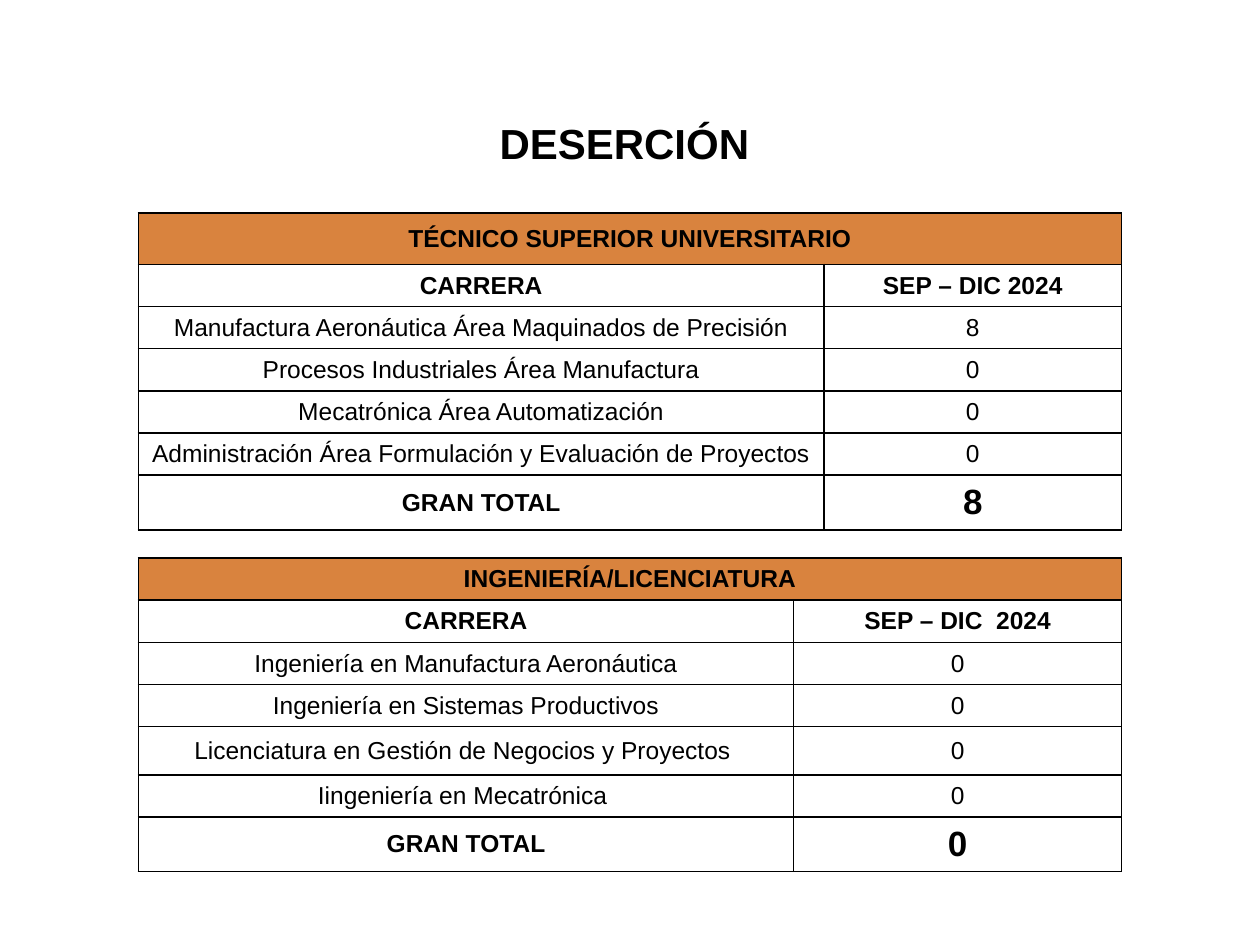
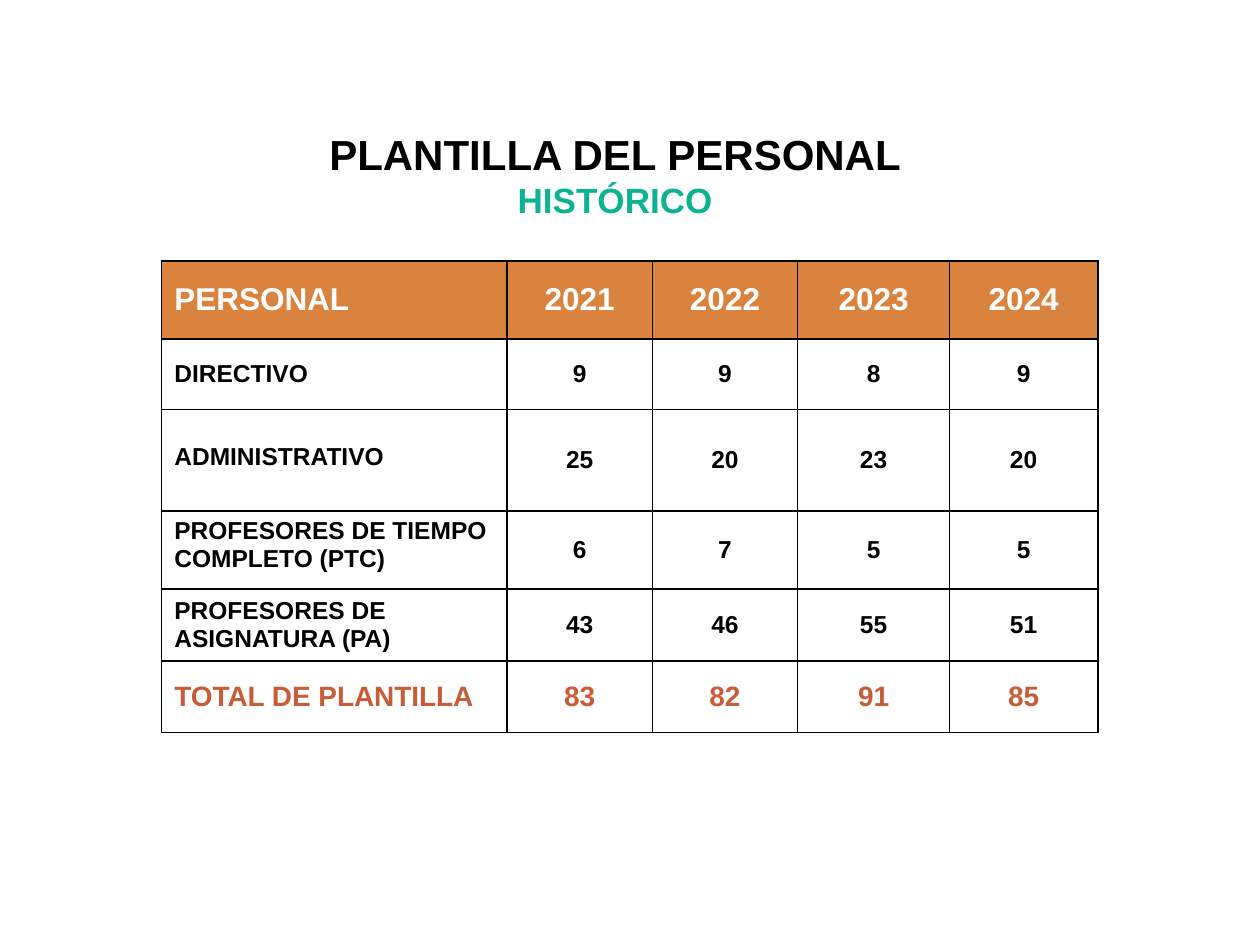
from dataclasses import dataclass
from typing import Any

from lxml import etree
from pptx import Presentation
from pptx import util as u
from pptx.dml.color import RGBColor
from pptx.enum import text
from pptx.oxml import ns

FONT = "Arial"
BLACK, WHITE, ORANGE, TEAL, RUST = "000000", "FFFFFF", "D9833E", "0CB393", "C65D38"
TITLE_ONLY = 5
BODY_HEIGHT = 0.85


@dataclass(frozen=True)
class Style:
    size: float = 14
    bold: bool = True
    color: str = BLACK
    fill: str = WHITE


@dataclass(frozen=True)
class Line:
    words: str
    style: Style


@dataclass(frozen=True)
class Row:
    words: tuple[str, ...]
    height: float
    first: Style
    others: Style
    label_top: float | None = None


@dataclass(frozen=True)
class Grid:
    left: float
    top: float
    columns: tuple[float, ...]
    rows: list[Row]
    first_align: Any = text.PP_ALIGN.CENTER


HEADING = Style(size=24)
SUBHEADING = Style(size=20, color=TEAL)
BAND = Style(fill=ORANGE)
STRONG = Style()
PLAIN = Style(bold=False)
GRAND_TOTAL = Style(size=20)
YEARS = Style(size=18, color=WHITE, fill=ORANGE)
STAFF_TOTAL = Style(size=16, color=RUST)


def rgb(value: str) -> RGBColor:
    return RGBColor.from_string(value)


def apply(target: Any, values: dict[str, Any]) -> None:
    for name, value in values.items():
        setattr(target, name, value)


def write(para: Any, words: str, style: Style, align: Any) -> None:
    para.alignment = align
    span = para.add_run()
    span.text = words
    apply(span.font, {"name": FONT, "size": u.Pt(style.size), "bold": style.bold})
    span.font.color.rgb = rgb(style.color)


def add_borders(cell: Any) -> None:
    properties = cell._tc.get_or_add_tcPr()
    for side in ("a:lnL", "a:lnR", "a:lnT", "a:lnB"):
        line = etree.SubElement(properties, ns.qn(side), w=str(u.Pt(1)))
        paint = etree.SubElement(line, ns.qn("a:solidFill"))
        etree.SubElement(paint, ns.qn("a:srgbClr"), val=BLACK)


def add_page(deck: Any, left: float, top: float, width: float, height: float,
             lines: list[Line]) -> Any:
    page = deck.slides.add_slide(deck.slide_layouts[TITLE_ONLY])
    title = page.shapes.title
    apply(title, {"left": u.Cm(left), "top": u.Cm(top),
                  "width": u.Cm(width), "height": u.Cm(height)})
    box = title.text_frame
    apply(box, {"word_wrap": True, "auto_size": text.MSO_AUTO_SIZE.NONE,
                "vertical_anchor": text.MSO_ANCHOR.TOP})
    for index, line in enumerate(lines):
        para = box.add_paragraph() if index else box.paragraphs[0]
        write(para, line.words, line.style, text.PP_ALIGN.CENTER)
    return page


def add_grid(page: Any, grid: Grid) -> None:
    height = sum(row.height for row in grid.rows)
    table = page.shapes.add_table(
        len(grid.rows), len(grid.columns), u.Cm(grid.left), u.Cm(grid.top),
        u.Cm(sum(grid.columns)), u.Cm(height)).table
    apply(table, {"first_row": False, "horz_banding": False})
    for column, width in zip(table.columns, grid.columns):
        column.width = u.Cm(width)
    for row_index, row in enumerate(grid.rows):
        table.rows[row_index].height = u.Cm(row.height)
        for column_index in range(len(grid.columns)):
            cell = table.cell(row_index, column_index)
            style = row.others if column_index else row.first
            cell.vertical_anchor = text.MSO_ANCHOR.MIDDLE
            add_borders(cell)
            cell.fill.solid()
            cell.fill.fore_color.rgb = rgb(style.fill)
            if column_index < len(row.words):
                align = text.PP_ALIGN.CENTER if column_index else grid.first_align
                write(cell.text_frame.paragraphs[0], row.words[column_index], style, align)
        label = table.cell(row_index, 0)
        if row.label_top is not None:
            apply(label, {"vertical_anchor": text.MSO_ANCHOR.TOP,
                          "margin_top": u.Cm(row.label_top)})
        if len(row.words) == 1:
            label.merge(table.cell(row_index, len(grid.columns) - 1))


def dropout_rows(level: str, level_height: float, period: str,
                 careers: list[tuple[str, str, float]], total: str) -> list[Row]:
    return [
        Row((level,), level_height, BAND, BAND),
        Row(("CARRERA", period), BODY_HEIGHT, STRONG, STRONG),
        *(Row((career, count), height, PLAIN, PLAIN) for career, count, height in careers),
        Row(("GRAN TOTAL", total), 1.1, STRONG, GRAND_TOTAL),
    ]


def build_dropout(deck: Any) -> None:
    page = add_page(deck, 5.11, 2.24, 15.19, 1.27, [Line("DESERCIÓN ", HEADING)])
    technical = dropout_rows("TÉCNICO SUPERIOR UNIVERSITARIO", 1.04, "SEP – DIC 2024", [
        ("Manufactura Aeronáutica Área Maquinados de Precisión", "8", BODY_HEIGHT),
        ("Procesos Industriales Área Manufactura", "0", BODY_HEIGHT),
        ("Mecatrónica Área Automatización", "0", BODY_HEIGHT),
        ("Administración Área Formulación y Evaluación de Proyectos", "0", BODY_HEIGHT),
    ], "8")
    degree = dropout_rows("INGENIERÍA/LICENCIATURA", BODY_HEIGHT, "SEP – DIC  2024", [
        ("Ingeniería en Manufactura Aeronáutica", "0", BODY_HEIGHT),
        ("Ingeniería en Sistemas Productivos", "0", BODY_HEIGHT),
        ("Licenciatura en Gestión de Negocios y Proyectos ", "0", 0.97),
        ("Iingeniería en Mecatrónica ", "0", BODY_HEIGHT),
    ], "0")
    add_grid(page, Grid(2.79, 4.29, (13.82, 6), technical))
    add_grid(page, Grid(2.79, 11.25, (13.21, 6.61), degree))


def build_staff(deck: Any) -> None:
    page = add_page(deck, 2.62, 2.46, 19.56, 2.13, [
        Line("PLANTILLA DEL PERSONAL", HEADING),
        Line("HISTÓRICO", SUBHEADING),
    ])
    rows = [
        Row(("PERSONAL", "2021", "2022", "2023", "2024"), 1.57, YEARS, YEARS),
        Row(("DIRECTIVO", "9", "9", "8", "9"), 1.43, STRONG, STRONG),
        Row(("ADMINISTRATIVO", "25", "20", "23", "20"), 2.04, STRONG, STRONG, 0.67),
        Row(("PROFESORES DE TIEMPO COMPLETO (PTC)", "6", "7", "5", "5"),
            1.57, STRONG, STRONG, 0.13),
        Row(("PROFESORES DE ASIGNATURA (PA)", "43", "46", "55", "51"), 1.45, STRONG, STRONG),
        Row(("TOTAL DE PLANTILLA", "83", "82", "91", "85"), 1.45, STAFF_TOTAL, STAFF_TOTAL),
    ]
    add_grid(page, Grid(3.26, 5.26, (6.96, 2.93, 2.93, 3.06, 2.99), rows, text.PP_ALIGN.LEFT))


def main() -> None:
    deck = Presentation()
    apply(deck, {"slide_width": u.Cm(25.4), "slide_height": u.Cm(19.05)})
    build_dropout(deck)
    build_staff(deck)
    deck.save("out.pptx")


if __name__ == "__main__":
    main()
